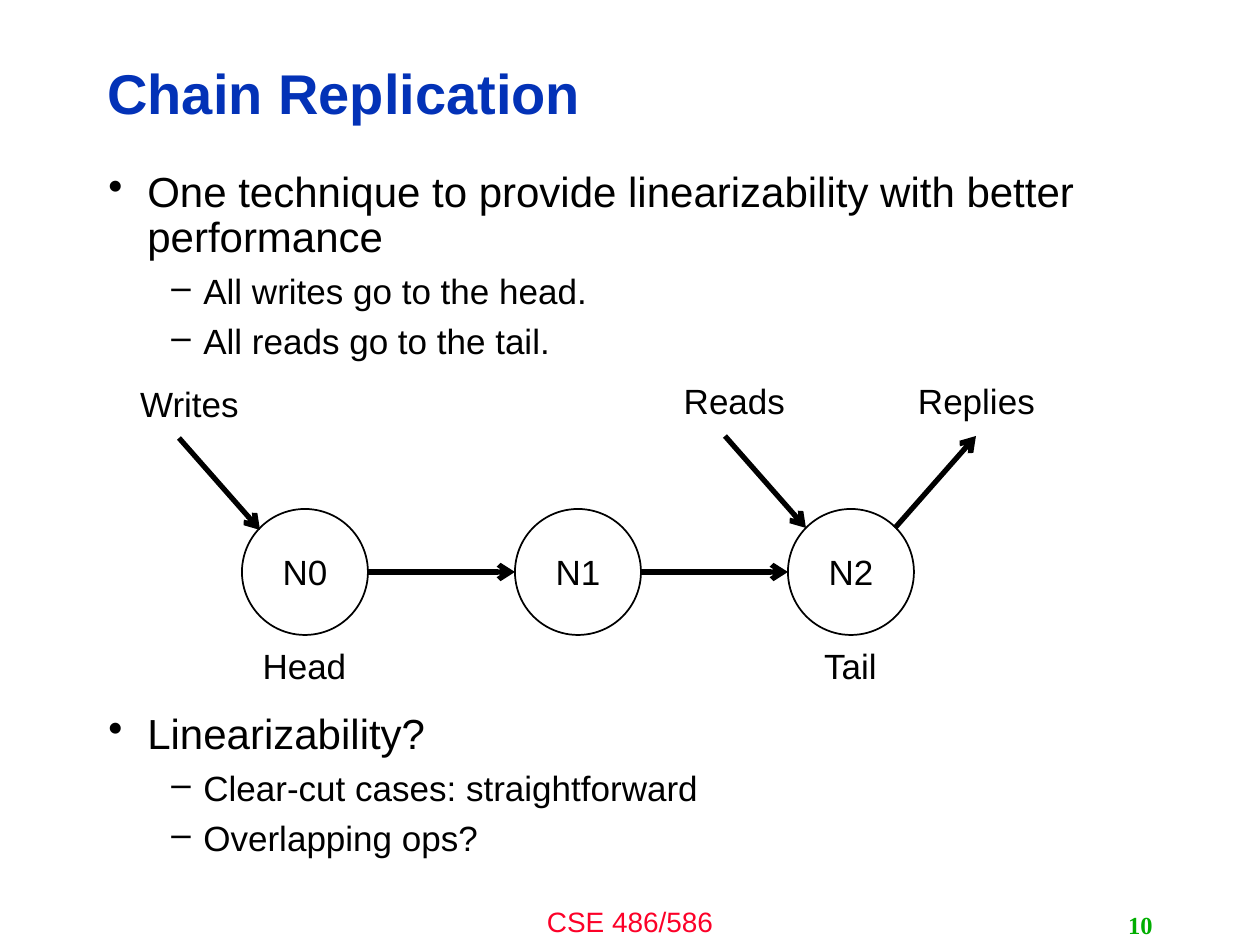
from lxml import etree
from pptx import Presentation
from pptx import util as u
from pptx.dml.color import RGBColor
from pptx.enum import shapes, text
from pptx.oxml import ns

PX = 914400 // 126
LEFT, CENTER, RIGHT = text.PP_ALIGN.LEFT, text.PP_ALIGN.CENTER, text.PP_ALIGN.RIGHT


def color(value):
    return RGBColor.from_string(value)


def write(shape, words, size, ink="000000", align=CENTER, font="Arial", bold=False):
    shape.text_frame.word_wrap = True
    paragraph = shape.text_frame.paragraphs[0]
    paragraph.text = words
    paragraph.alignment = align
    paragraph.font.name = font
    paragraph.font.size = u.Pt(size)
    paragraph.font.bold = bold
    paragraph.font.color.rgb = color(ink)
    return paragraph


presentation = Presentation()
presentation.slide_width = 1260 * PX
presentation.slide_height = 945 * PX
slide = presentation.slides.add_slide(presentation.slide_layouts[6])

footer = slide.shapes.add_textbox(420 * PX, 898 * PX, 420 * PX, 47 * PX)
write(footer, "CSE 486/586", 16, "FC0128")

title = slide.shapes.add_textbox(95 * PX, 45 * PX, 1005 * PX, 102 * PX)
title.text_frame.vertical_anchor = text.MSO_ANCHOR.MIDDLE
write(title, "Chain Replication", 32, "0332B7", LEFT, bold=True).line_spacing = 0.9

body = slide.shapes.add_textbox(96 * PX, 165 * PX, 1058 * PX, 679 * PX)
body.text_frame.word_wrap = True
outline = [
    (0, "One technique to provide linearizability with better performance", 0),
    (1, "All writes go to the head.", 7),
    (1, "All reads go to the tail.", 7),
    (0, "Linearizability?", 201),
    (1, "Clear-cut cases: straightforward", 7),
    (1, "Overlapping ops?", 7),
]
levels = [(24, 39, 39, "•"), (20, 95, 32, "–")]
for index, (level, words, space) in enumerate(outline):
    size, margin, hanging, bullet = levels[level]
    frame = body.text_frame
    paragraph = frame.add_paragraph() if index else frame.paragraphs[0]
    paragraph.text = words
    paragraph.level = level
    paragraph.line_spacing = 0.9
    paragraph.space_before = u.Pt(space)
    paragraph.font.name = "Arial"
    paragraph.font.size = u.Pt(size)
    paragraph.font.color.rgb = color("000000")
    properties = paragraph._p.get_or_add_pPr()
    properties.set("marL", str(margin * PX))
    properties.set("indent", str(-hanging * PX))
    mark = etree.Element(ns.qn("a:buChar"), char=bullet)
    properties.insert_element_before(mark, "a:tabLst", "a:defRPr", "a:extLst")

number = slide.shapes.add_textbox(903 * PX, 905 * PX, 262 * PX, 40 * PX)
number.text_frame.vertical_anchor = text.MSO_ANCHOR.MIDDLE
write(number, "10", 14, "00AE00", RIGHT, "Times New Roman", True)

for index in range(3):
    node = slide.shapes.add_shape(
        shapes.MSO_SHAPE.OVAL, (242 + 273 * index) * PX, 509 * PX, 126 * PX, 126 * PX)
    node.shadow.inherit = False
    node.fill.solid()
    node.fill.fore_color.rgb = color("FFFFFF")
    node.line.color.rgb = color("000000")
    node.line.width = u.Pt(1)
    node.text_frame.vertical_anchor = text.MSO_ANCHOR.MIDDLE
    write(node, f"N{index}", 20)

arrows = [
    (368, 572, 515, 572),
    (641, 572, 788, 572),
    (725, 436, 806, 528),
    (895, 528, 976, 436),
    (179, 438, 260, 530),
]
for ends in arrows:
    arrow = slide.shapes.add_connector(
        shapes.MSO_CONNECTOR.STRAIGHT, *(end * PX for end in ends))
    arrow.line.color.rgb = color("000000")
    arrow.line.width = u.Pt(3)
    etree.SubElement(arrow.line._get_or_add_ln(), ns.qn("a:tailEnd"), type="arrow")
    etree.SubElement(arrow._element.spPr, ns.qn("a:effectLst"))

labels = [
    ("Reads", 640, 373),
    ("Replies", 882, 373),
    ("Writes", 95, 376),
    ("Head", 210, 638),
    ("Tail", 756, 638),
]
for words, left, top in labels:
    label = slide.shapes.add_textbox(left * PX, top * PX, 189 * PX, 55 * PX)
    write(label, words, 20)

presentation.save("out.pptx")
